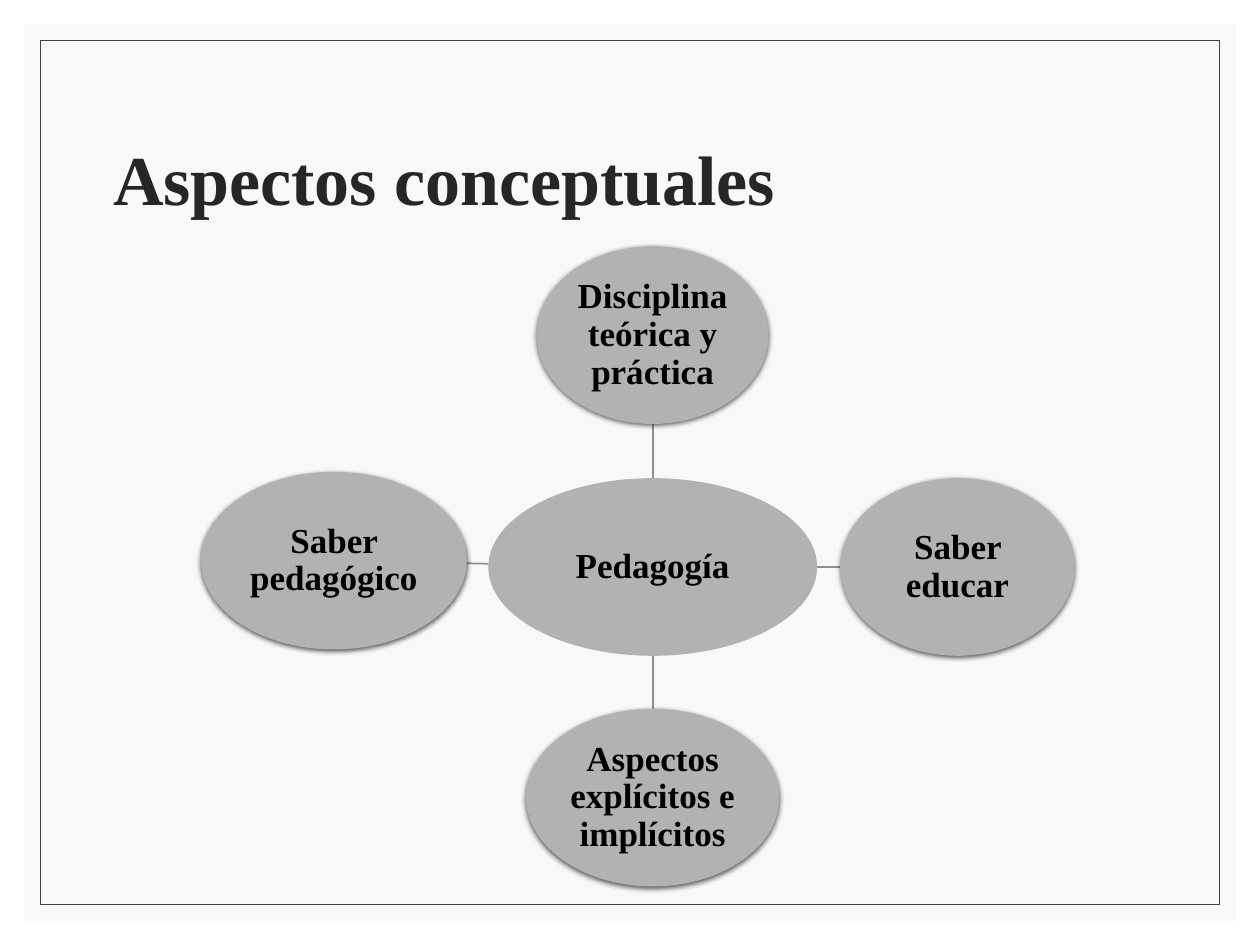
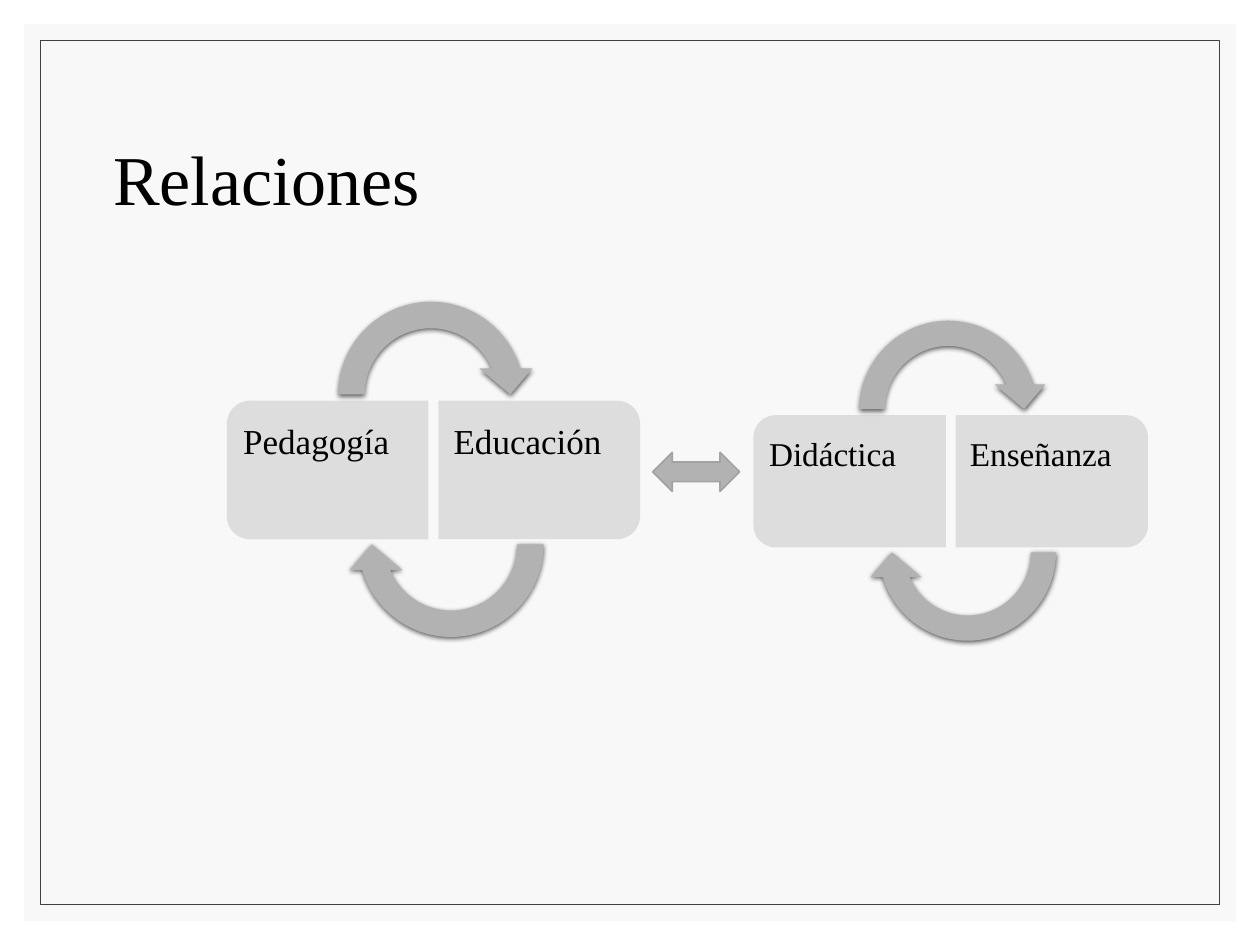
from dataclasses import dataclass
from math import hypot

from lxml.etree import SubElement
from pptx import Presentation
from pptx.dml.color import RGBColor
from pptx.enum.shapes import MSO_CONNECTOR as Connector, MSO_SHAPE as Shape
from pptx.enum.text import MSO_ANCHOR as Anchor, PP_ALIGN as Align
from pptx.oxml.ns import qn
from pptx.shapes.autoshape import Shape as AutoShape
from pptx.slide import Slide
from pptx.util import Inches, Pt

PAPER = RGBColor(0xF8, 0xF8, 0xF8)
FRAME = RGBColor(0x40, 0x40, 0x40)
TITLE_GRAY = RGBColor(0x26, 0x26, 0x26)
BLACK = RGBColor(0, 0, 0)
MID_GRAY = RGBColor(0xB2, 0xB2, 0xB2)
LIGHT_GRAY = RGBColor(0xDD, 0xDD, 0xDD)
SPOKE_GRAY = RGBColor(0x8F, 0x8F, 0x8F)
EDGE_GRAY = RGBColor(0xA3, 0xA3, 0xA3)
FONT = "Times New Roman"


@dataclass(frozen=True)
class Concept:
    text: str
    x: float  # centre
    y: float  # centre
    width: float
    height: float = 1.41

    def edge_towards(self, other: "Concept") -> tuple[float, float]:
        """Point where the line between both centres leaves this ellipse."""
        dx, dy = other.x - self.x, other.y - self.y
        reach = 1 / hypot(dx / (self.width / 2), dy / (self.height / 2))
        return self.x + dx * reach, self.y + dy * reach


@dataclass(frozen=True)
class Cycle:
    terms: tuple[str, str]
    left: float
    middle: float
    scale: float
    size: int


HUB = Concept("Pedagogía", 5.18, 4.5, 2.61)
ASPECTS = (
    Concept("Disciplina teórica y práctica", 5.18, 2.66, 1.84),
    Concept("Saber educar", 7.6, 4.5, 1.86),
    Concept("Aspectos explícitos e implícitos", 5.18, 6.33, 2.01),
    Concept("Saber pedagógico", 2.65, 4.45, 2.11),
)
CYCLES = (
    Cycle(("Pedagogía", "Educación"), 1.8, 3.73, 1, 20),
    Cycle(("Didáctica", "Enseñanza"), 5.98, 3.82, 21 / 22, 19),
)


def add_filled(slide: Slide, kind: Shape, left: float, top: float, width: float,
               height: float, color: RGBColor, raised: bool = False) -> AutoShape:
    """Add a shape without outline; a raised one casts a soft shadow downwards."""
    shape = slide.shapes.add_shape(kind, Inches(left), Inches(top), Inches(width), Inches(height))
    shape.fill.solid()
    shape.fill.fore_color.rgb = color
    shape.line.fill.background()
    shape.shadow.inherit = False
    if raised:
        effects = shape._element.spPr.find(qn("a:effectLst"))
        shadow = SubElement(effects, qn("a:outerShdw"), blurRad=str(Pt(3)),
                            dist=str(Pt(1)), dir="5400000", rotWithShape="0")
        black = SubElement(shadow, qn("a:srgbClr"), val=str(BLACK))
        SubElement(black, qn("a:alpha"), val="63000")
    return shape


def write(shape: AutoShape, text: str, size: int, color: RGBColor = BLACK, bold: bool = False,
          align: Align = Align.LEFT, anchor: Anchor = Anchor.MIDDLE,
          insets: tuple[float, float, float, float] = (0.1, 0.05, 0.1, 0.05)) -> None:
    frame = shape.text_frame
    frame.word_wrap = True
    frame.vertical_anchor = anchor
    (frame.margin_left, frame.margin_top,
     frame.margin_right, frame.margin_bottom) = map(Inches, insets)
    paragraph = frame.paragraphs[0]
    paragraph.text = text
    paragraph.alignment = align
    paragraph.line_spacing = 0.9
    font = paragraph.font
    font.name, font.size, font.bold = FONT, Pt(size), bold
    font.color.rgb = color


def add_framed_slide(prs: Presentation, title: str, color: RGBColor, bold: bool) -> Slide:
    slide = prs.slides.add_slide(prs.slide_layouts[6])
    add_filled(slide, Shape.RECTANGLE, 0.19, 0.19, 9.62, 7.12, PAPER)
    border = add_filled(slide, Shape.RECTANGLE, 0.32, 0.32, 9.36, 6.86, PAPER)
    border.fill.background()
    border.line.color.rgb = FRAME
    border.line.width = Pt(0.5)
    heading = slide.shapes.add_textbox(Inches(0.8), Inches(0.7), Inches(8.4), Inches(1.5))
    write(heading, title, 40, color, bold)
    return slide


def draw_concept(slide: Slide, concept: Concept, raised: bool) -> None:
    ellipse = add_filled(slide, Shape.OVAL, concept.x - concept.width / 2,
                         concept.y - concept.height / 2, concept.width, concept.height,
                         MID_GRAY, raised)
    write(ellipse, concept.text, 20, bold=True, align=Align.CENTER, insets=(0.01,) * 4)


def draw_spoke(slide: Slide, hub: Concept, aspect: Concept) -> None:
    ends = hub.edge_towards(aspect) + aspect.edge_towards(hub)
    spoke = slide.shapes.add_connector(Connector.STRAIGHT, *map(Inches, ends))
    spoke.line.color.rgb = SPOKE_GRAY
    spoke.line.width = Pt(1)
    SubElement(spoke._element.spPr, qn("a:effectLst"))


def draw_cycle(slide: Slide, cycle: Cycle) -> None:
    """Draw two half-rounded cards side by side, with an arrow above and one below."""
    scale = cycle.scale
    width, height, gap, arrow = (scale * length for length in (1.6, 1.1, 0.08, 1.68))
    pad = 0.05 * scale
    sides = ((270, pad, (0.08, 0.14, 0.12, 0.14)), (90, 0, (0.12, 0.14, 0.08, 0.14)))
    for index, (term, (rotation, indent, insets)) in enumerate(zip(cycle.terms, sides)):
        left = cycle.left + index * (width + gap)
        card = add_filled(slide, Shape.ROUND_2_SAME_RECTANGLE, left + (width - height) / 2,
                          cycle.middle - width / 2, height, width, LIGHT_GRAY)
        card.adjustments[0] = 0.167
        card.rotation = rotation
        label = slide.shapes.add_textbox(
            Inches(left + indent), Inches(cycle.middle - height / 2 + pad),
            Inches(width - pad), Inches(height - 2 * pad))
        write(label, term, cycle.size, anchor=Anchor.TOP,
              insets=tuple(scale * inset for inset in insets))

    center = cycle.left + width + gap / 2
    for rotation, dx, dy in ((0, -0.02, -0.6), (180, 0.14, 0.59)):
        turn = add_filled(slide, Shape.CIRCULAR_ARROW, center + dx * scale - arrow / 2,
                          cycle.middle + dy * scale - arrow / 2, arrow, arrow, MID_GRAY, True)
        for index, value in enumerate((0.125, 11.42322, 204.57678, 108, 0.125)):
            turn.adjustments[index] = value
        turn.rotation = rotation


def build_concepts(prs: Presentation) -> None:
    slide = add_framed_slide(prs, "Aspectos conceptuales", TITLE_GRAY, True)
    draw_concept(slide, HUB, raised=False)
    for aspect in ASPECTS:
        draw_spoke(slide, HUB, aspect)
        draw_concept(slide, aspect, raised=True)


def build_relations(prs: Presentation) -> None:
    slide = add_framed_slide(prs, "Relaciones", BLACK, False)
    for cycle in CYCLES:
        draw_cycle(slide, cycle)
    link = add_filled(slide, Shape.LEFT_RIGHT_ARROW, 5.18, 3.59, 0.69, 0.31, MID_GRAY)
    link.line.color.rgb = EDGE_GRAY
    link.line.width = Pt(1)


def main() -> None:
    prs = Presentation()
    prs.slide_width, prs.slide_height = Inches(10), Inches(7.5)
    build_concepts(prs)
    build_relations(prs)
    prs.save("out.pptx")


if __name__ == "__main__":
    main()
